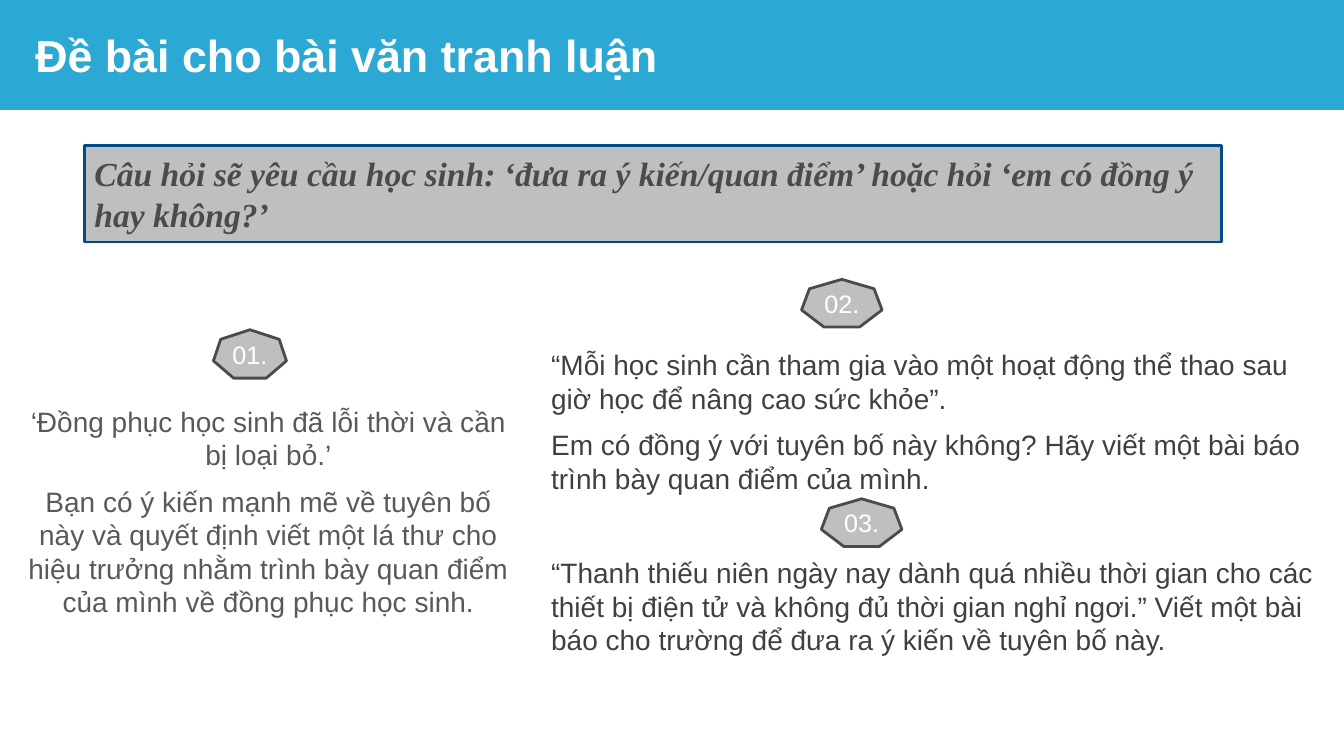
"""Builds a slide of essay prompts for argumentative writing."""
from pptx import Presentation
from pptx import util as u
from pptx.dml import color
from pptx.enum import shapes, text


def rgb(value):
    return color.RGBColor.from_string(value)


def write(frame, paragraphs, size=20, ink="404040", font="Arial", bold=False,
          italic=False, align=text.PP_ALIGN.LEFT, anchor=text.MSO_ANCHOR.TOP, gap=9):
    frame.word_wrap = True
    frame.vertical_anchor = anchor
    for index, words in enumerate(paragraphs):
        para = frame.add_paragraph() if index else frame.paragraphs[0]
        para.alignment = align
        para.space_before = u.Pt(gap if index else 0)
        span = para.add_run()
        span.text = words
        span.font.name = font
        span.font.size = u.Pt(size)
        span.font.bold = bold
        span.font.italic = italic
        span.font.color.rgb = rgb(ink)


class PromptSlide:
    blue, grey, dark, navy, white = "2CA8D4", "BFBFBF", "4B4B4B", "004B8C", "FFFFFF"

    def __init__(self, deck):
        self.page = deck.slides.add_slide(deck.slide_layouts[6])

    def shape(self, kind, place, fill, line=None):
        shape = self.page.shapes.add_shape(kind, *map(u.Cm, place))
        shape.shadow.inherit = False
        shape.fill.solid()
        shape.fill.fore_color.rgb = rgb(fill)
        if line:
            shape.line.color.rgb = rgb(line)
            shape.line.width = u.Pt(2)
        else:
            shape.line.fill.background()
        return shape

    def words(self, place, paragraphs, **style):
        box = self.page.shapes.add_textbox(*map(u.Cm, place))
        write(box.text_frame, paragraphs, **style)

    def header(self, title):
        self.shape(shapes.MSO_SHAPE.RECTANGLE, (0, 0, 33.87, 2.77), self.blue)
        self.words((0.64, 0.3, 32.84, 2.16), [title], size=32, ink=self.white,
                   bold=True, anchor=text.MSO_ANCHOR.MIDDLE)

    def badge(self, label, place):
        badge = self.shape(shapes.MSO_SHAPE.HEPTAGON, place, self.grey, self.dark)
        write(badge.text_frame, [label], size=18, ink=self.white,
              align=text.PP_ALIGN.CENTER, anchor=text.MSO_ANCHOR.MIDDLE)

    def banner(self, sentence, place):
        banner = self.shape(shapes.MSO_SHAPE.RECTANGLE, place, self.grey, self.navy)
        write(banner.text_frame, [sentence], size=24, ink=self.dark, font="Times New Roman",
              bold=True, italic=True, anchor=text.MSO_ANCHOR.MIDDLE)


def main():
    deck = Presentation()
    deck.slide_width, deck.slide_height = u.Cm(33.87), u.Cm(19.05)
    slide = PromptSlide(deck)
    slide.header("Đề bài cho bài văn tranh luận")
    slide.words((0.3, 10.06, 12.93, 8.61), [
        "‘Đồng phục học sinh đã lỗi thời và cần bị loại bỏ.’",
        "Bạn có ý kiến mạnh mẽ về tuyên bố này và quyết định viết một lá thư cho "
        "hiệu trưởng nhằm trình bày quan điểm của mình về đồng phục học sinh.",
    ], ink="595959", align=text.PP_ALIGN.CENTER)
    slide.words((13.64, 8.64, 19.79, 4.1), [
        "“Mỗi học sinh cần tham gia vào một hoạt động thể thao sau giờ học "
        "để nâng cao sức khỏe”.",
        "Em có đồng ý với tuyên bố này không? Hãy viết một bài báo trình bày "
        "quan điểm của mình.",
    ])
    slide.words((13.64, 13.88, 19.79, 3.5), [
        "“Thanh thiếu niên ngày nay dành quá nhiều thời gian cho các thiết bị điện tử "
        "và không đủ thời gian nghỉ ngơi.” Viết một bài báo cho trường để đưa ra "
        "ý kiến về tuyên bố này.",
    ])
    slide.badge("01.", (5.38, 8.31, 1.84, 1.22))
    slide.badge("02.", (20.2, 7.04, 2.03, 1.2))
    slide.badge("03.", (20.7, 12.57, 2.03, 1.2))
    slide.banner("Câu hỏi sẽ yêu cầu học sinh: ‘đưa ra ý kiến/quan điểm’ hoặc hỏi "
                 "‘em có đồng ý hay không?’", (2.13, 3.66, 28.65, 2.44))
    deck.save("out.pptx")


if __name__ == "__main__":
    main()
